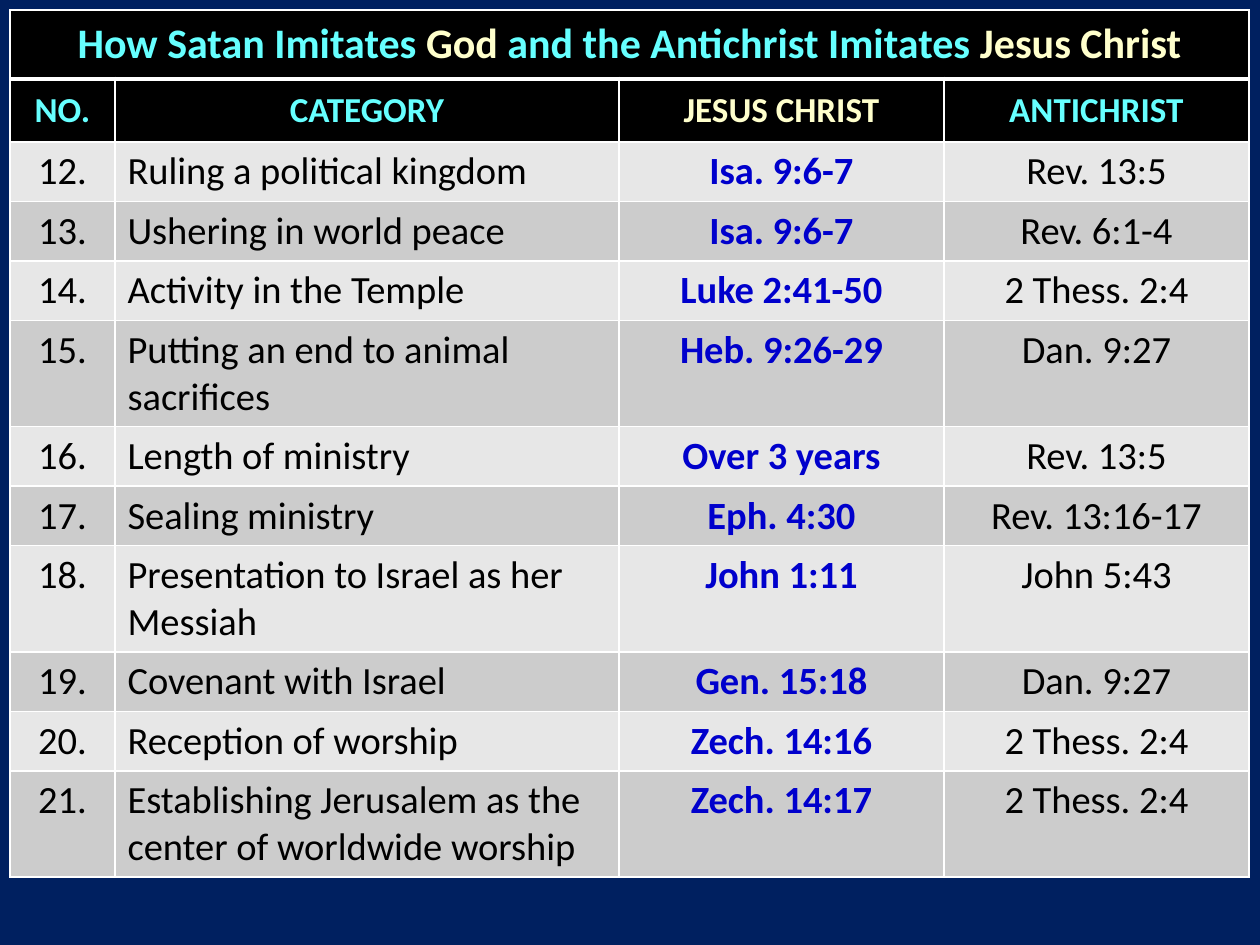
from lxml import etree
from pptx import Presentation
from pptx import util as u
from pptx.dml.color import RGBColor
from pptx.enum import text
from pptx.oxml import ns

PX = u.Inches(1) / 126
BLACK, WHITE, NAVY = "000000", "FFFFFF", "002060"
CYAN, CREAM, BLUE = "66FFFF", "FFFFCC", "0000CC"
BANDS = ("E7E7E7", "CCCCCC")
COLUMN_WIDTHS = (105, 504, 325, 305)
TITLE_HEIGHT, HEADING_HEIGHT, LINE_HEIGHT, TWO_LINE_HEIGHT = 69, 63, 59, 106
LONG_CATEGORY = 30

TITLE = (
    ("How Satan Imitates ", CYAN),
    ("God", CREAM),
    (" and the Antichrist Imitates ", CYAN),
    ("Jesus Christ", CREAM),
)
HEADINGS = (("NO.", CYAN), ("CATEGORY", CYAN), ("JESUS CHRIST", CREAM), ("ANTICHRIST", CYAN))
FIRST_NUMBER = 12
COMPARISONS = (
    ("Ruling a political kingdom", "Isa. 9:6-7", "Rev. 13:5"),
    ("Ushering in world peace", "Isa. 9:6-7", "Rev. 6:1-4"),
    ("Activity in the Temple", "Luke 2:41-50", "2 Thess. 2:4"),
    ("Putting an end to animal sacrifices", "Heb. 9:26-29", "Dan. 9:27"),
    ("Length of ministry", "Over 3 years", "Rev. 13:5"),
    ("Sealing ministry", "Eph. 4:30", "Rev. 13:16-17"),
    ("Presentation to Israel as her Messiah", "John 1:11", "John 5:43"),
    ("Covenant with Israel", "Gen. 15:18", "Dan. 9:27"),
    ("Reception of worship", "Zech. 14:16", "2 Thess. 2:4"),
    ("Establishing Jerusalem as the center of worldwide worship", "Zech. 14:17", "2 Thess. 2:4"),
)


def px(length):
    return u.Emu(round(length * PX))


def color(hex_string):
    return RGBColor.from_string(hex_string)


class SlideBuilder:
    font = "Calibri"

    def __init__(self, slide):
        self.slide = slide

    def background(self, fill):
        self.slide.background.fill.solid()
        self.slide.background.fill.fore_color.rgb = color(fill)

    def table(self, left, top, widths, heights):
        frame = self.slide.shapes.add_table(
            len(heights), len(widths), px(left), px(top), px(sum(widths)), px(sum(heights)))
        for column, width in zip(frame.table.columns, widths):
            column.width = px(width)
        for row, height in zip(frame.table.rows, heights):
            row.height = px(height)
        return frame.table

    def borders(self, cell, top=1, bottom=1):
        """Draw white cell edges; widths are in points. Call before filling the cell."""
        properties = cell._tc.get_or_add_tcPr()
        for side, width in (("L", 1), ("R", 1), ("T", top), ("B", bottom)):
            line = etree.SubElement(properties, ns.qn(f"a:ln{side}"), w=str(u.Pt(width)))
            fill = etree.SubElement(line, ns.qn("a:solidFill"))
            etree.SubElement(fill, ns.qn("a:srgbClr"), val=WHITE)

    def cell(self, cell, runs, fill, size, bold=False, centered=True, middle=False):
        cell.fill.solid()
        cell.fill.fore_color.rgb = color(fill)
        cell.vertical_anchor = text.MSO_ANCHOR.MIDDLE if middle else text.MSO_ANCHOR.TOP
        paragraph = cell.text_frame.paragraphs[0]
        paragraph.alignment = text.PP_ALIGN.CENTER if centered else text.PP_ALIGN.LEFT
        for words, ink in runs:
            run = paragraph.add_run()
            run.text = words
            run.font.name = self.font
            run.font.size = u.Pt(size)
            run.font.bold = bold
            run.font.color.rgb = color(ink)


def main():
    deck = Presentation()
    deck.slide_width, deck.slide_height = px(1260), px(945)
    builder = SlideBuilder(deck.slides.add_slide(deck.slide_layouts[6]))
    builder.background(NAVY)

    heights = [TITLE_HEIGHT, HEADING_HEIGHT] + [
        TWO_LINE_HEIGHT if len(category) > LONG_CATEGORY else LINE_HEIGHT
        for category, _, _ in COMPARISONS]
    table = builder.table(10, 10, COLUMN_WIDTHS, heights)
    for row in range(len(heights)):
        for column in range(len(COLUMN_WIDTHS)):
            builder.borders(table.cell(row, column),
                            top=3 if row == 1 else 1, bottom=3 if row == 0 else 1)

    title = table.cell(0, 0)
    title.merge(table.cell(0, len(COLUMN_WIDTHS) - 1))
    builder.cell(title, TITLE, BLACK, 24, bold=True, middle=True)
    for column, heading in enumerate(HEADINGS):
        builder.cell(table.cell(1, column), [heading], BLACK, 20, bold=True, middle=True)

    for index, comparison in enumerate(COMPARISONS):
        entries = (f"{FIRST_NUMBER + index}.", *comparison)
        for column, entry in enumerate(entries):
            is_christ = column == 2
            builder.cell(table.cell(index + 2, column),
                         [(entry, BLUE if is_christ else BLACK)],
                         BANDS[index % 2], 22, bold=is_christ, centered=column != 1)

    deck.save("out.pptx")


if __name__ == "__main__":
    main()
